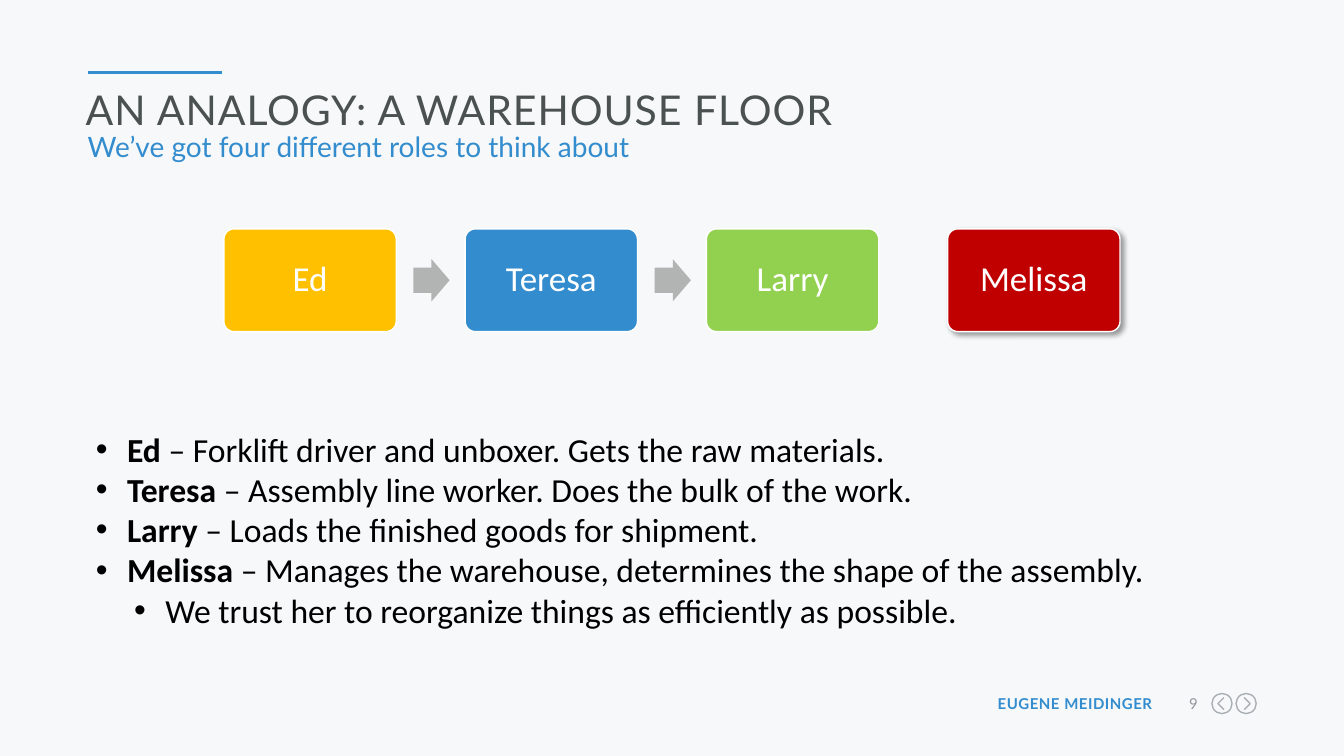
from dataclasses import dataclass

from lxml import etree
from pptx import Presentation
from pptx import util as u
from pptx.dml.color import RGBColor
from pptx.enum import shapes, text
from pptx.oxml import ns


@dataclass(frozen=True)
class Theme:
    background: str = "F6F8FA"
    accent: str = "328CCD"
    title: str = "4B5050"
    body: str = "000000"
    white: str = "FFFFFF"
    number: str = "91969B"
    icon: str = "AAAFB4"
    arrow: str = "B2B3B3"
    ed: str = "FFC000"
    larry: str = "92D050"
    melissa: str = "C00000"
    title_size: float = 29.3
    subtitle_size: float = 20
    body_size: float = 24
    role_size: float = 25
    footer_size: float = 10.7
    heading_font: str = "Lato"
    body_font: str = "Calibri"


theme = Theme()
rgb = RGBColor.from_string


def write(p, content, size, color, font=theme.heading_font, bold=False,
          spacing=0, align=text.PP_ALIGN.LEFT, line=1.0):
    p.alignment = align
    p.line_spacing = line
    p.space_before = p.space_after = u.Pt(0)
    r = p.add_run()
    r.text = content
    r.font.size = u.Pt(size)
    r.font.name = font
    r.font.bold = bold
    r.font.color.rgb = rgb(color)
    if spacing:
        r.font._element.set("spc", str(int(spacing * 100)))


def place(sp, left, top, width, height, inset=(0, 0)):
    sp.left, sp.top, sp.width, sp.height = map(u.Inches, (left, top, width, height))
    tf = sp.text_frame
    tf.word_wrap = True
    tf.auto_size = text.MSO_AUTO_SIZE.NONE
    tf.vertical_anchor = text.MSO_ANCHOR.TOP
    tf.margin_left = tf.margin_right = u.Inches(inset[0])
    tf.margin_top = tf.margin_bottom = u.Inches(inset[1])
    return tf


prs = Presentation()
prs.slide_width, prs.slide_height = u.Inches(13.33), u.Inches(7.5)
s = prs.slides.add_slide(prs.slide_layouts[1])
s.background.fill.solid()
s.background.fill.fore_color.rgb = rgb(theme.background)

rule = s.shapes.add_connector(shapes.MSO_CONNECTOR.STRAIGHT, u.Inches(0.87),
                              u.Inches(0.72), u.Inches(2.2), u.Inches(0.72))
rule.line.color.rgb = rgb(theme.accent)
rule.line.width = u.Pt(2.25)
etree.SubElement(rule._element.spPr, ns.qn("a:effectLst"))

tf = place(s.shapes.title, 0.85, 0.84, 11.6, 0.56)
write(tf.paragraphs[0], "AN ANALOGY: A WAREHOUSE FLOOR", theme.title_size,
      theme.title, spacing=0.7)

tf = place(s.shapes.add_textbox(0, 0, 0, 0), 0.87, 1.4, 11.6, 0.48)
write(tf.paragraphs[0], "We’ve got four different roles to think about",
      theme.subtitle_size, theme.accent, line=u.Pt(16))

footers = [
    ("EUGENE MEIDINGER", 9.74, 1.69, theme.accent, True),
    ("9", 11.58, 0.3, theme.number, False),
]
for label, left, width, color, bold in footers:
    tf = place(s.shapes.add_textbox(0, 0, 0, 0), left, 6.89, width, 0.18)
    write(tf.paragraphs[0], label, theme.footer_size, color, bold=bold,
          spacing=0.4, align=text.PP_ALIGN.RIGHT)

for center, direction in ((12.12, -1), (12.36, 1)):
    ring = s.shapes.add_shape(shapes.MSO_SHAPE.OVAL, u.Inches(center - 0.1),
                              u.Inches(6.88), u.Inches(0.2), u.Inches(0.2))
    tail, tip = center - 0.02 * direction, center + 0.04 * direction
    builder = s.shapes.build_freeform(u.Inches(tail), u.Inches(6.92))
    builder.add_line_segments([(u.Inches(tip), u.Inches(6.98)),
                               (u.Inches(tail), u.Inches(7.04))], close=False)
    for sp in (ring, builder.convert_to_shape()):
        sp.shadow.inherit = False
        sp.fill.background()
        sp.line.color.rgb = rgb(theme.icon)
        sp.line.width = u.Pt(1)

roles = [
    ("Ed", theme.ed, " – Forklift driver and unboxer. Gets the raw materials."),
    ("Teresa", theme.accent, " – Assembly line worker. Does the bulk of the work."),
    ("Larry", theme.larry, " – Loads the finished goods for shipment."),
    ("Melissa", theme.melissa,
     " – Manages the warehouse, determines the shape of the assembly."),
]
for i, (name, color, duty) in enumerate(roles):
    left = 2.22 + 2.393 * i
    card = s.shapes.add_shape(shapes.MSO_SHAPE.ROUNDED_RECTANGLE, 0, 0, 0, 0)
    tf = place(card, left, 2.27, 1.71, 1.02, inset=(0.13, 0.13))
    tf.vertical_anchor = text.MSO_ANCHOR.MIDDLE
    card.adjustments[0] = 0.1
    card.shadow.inherit = False
    card.fill.solid()
    card.fill.fore_color.rgb = rgb(color)
    card.line.color.rgb = rgb(theme.white)
    card.line.width = u.Pt(1)
    write(tf.paragraphs[0], name, theme.role_size, theme.white,
          font=theme.body_font, align=text.PP_ALIGN.CENTER, line=0.9)
    if i < 2:
        arrow = s.shapes.add_shape(
            shapes.MSO_SHAPE.RIGHT_ARROW, u.Inches(left + 1.88), u.Inches(2.57),
            u.Inches(0.36), u.Inches(0.42))
        arrow.adjustments[0], arrow.adjustments[1] = 0.6, 0.5
        arrow.shadow.inherit = False
        arrow.fill.solid()
        arrow.fill.fore_color.rgb = rgb(theme.arrow)
        arrow.line.fill.background()

effects = card._element.spPr.find(ns.qn("a:effectLst"))
shadow = etree.SubElement(effects, ns.qn("a:outerShdw"), blurRad=str(u.Pt(4)),
                          dist=str(u.Pt(3)), dir="2700000", algn="tl", rotWithShape="0")
shade = etree.SubElement(shadow, ns.qn("a:srgbClr"), val="000000")
etree.SubElement(shade, ns.qn("a:alpha"), val="40000")

tf = place(s.placeholders[1], 0.85, 4.2, 11.6, 2.12, inset=(0.1, 0.05))
bullets = [(name, duty, 0) for name, color, duty in roles]
bullets.append(("", "We trust her to reorganize things as efficiently as possible.", 1))
for i, (name, duty, level) in enumerate(bullets):
    p = tf.add_paragraph() if i else tf.paragraphs[0]
    p.level = level
    if name:
        write(p, name, theme.body_size, theme.body, font=theme.body_font, bold=True)
    write(p, duty, theme.body_size, theme.body, font=theme.body_font)
    pPr = p._p.get_or_add_pPr()
    pPr.set("marL", str(u.Inches(0.31 + 0.38 * level)))
    pPr.set("indent", str(u.Inches(-0.31)))
    etree.SubElement(pPr, ns.qn("a:buFont"), typeface="Arial")
    etree.SubElement(pPr, ns.qn("a:buChar"), char="•")

prs.save("out.pptx")
